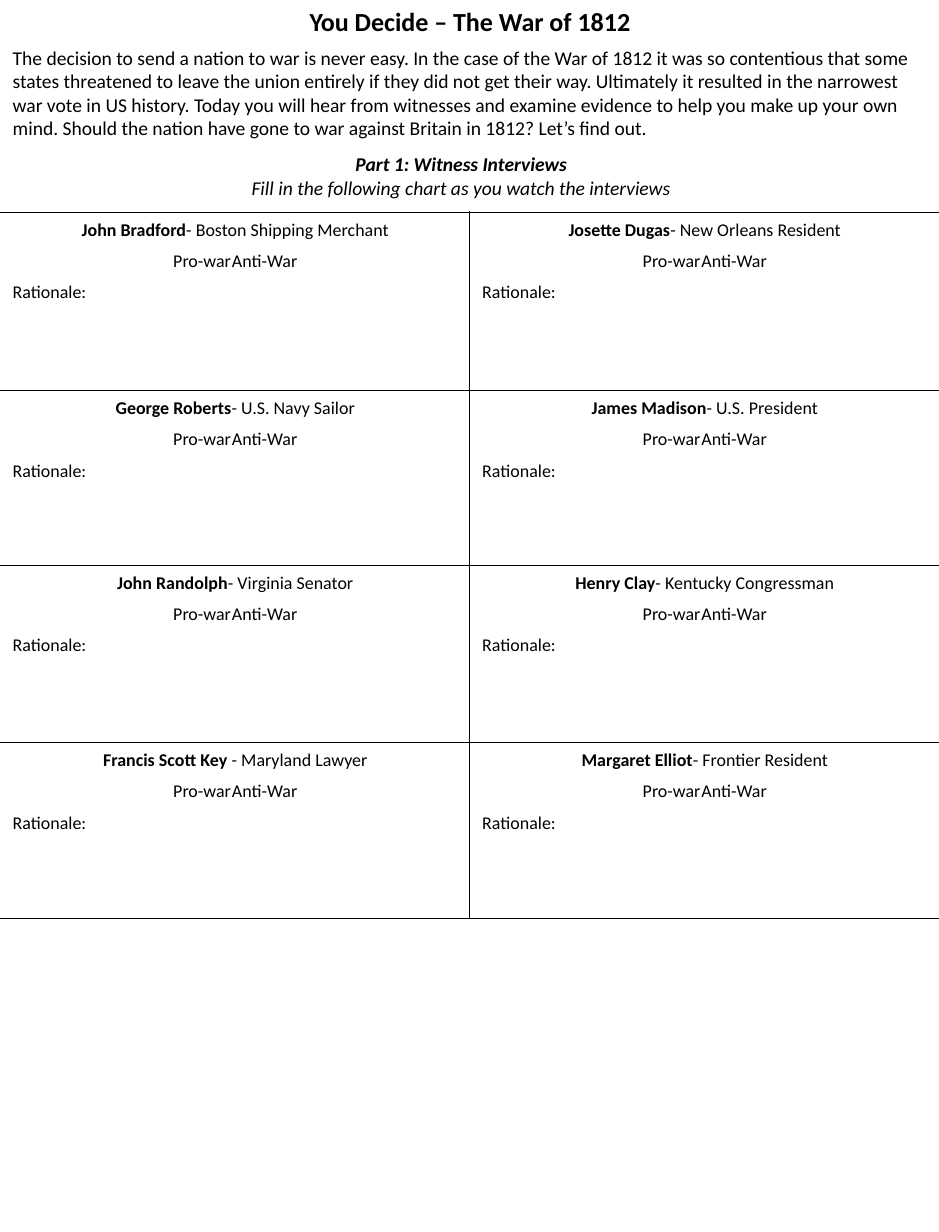
from lxml.etree import SubElement
from pptx import Presentation
from pptx.dml.color import RGBColor
from pptx.enum.shapes import MSO_CONNECTOR
from pptx.enum.text import MSO_ANCHOR, MSO_AUTO_SIZE, PP_ALIGN
from pptx.oxml.ns import qn
from pptx.util import Inches, Pt


def color(hex_code):
    """Turn a hex string into a colour."""
    return RGBColor.from_string(hex_code)


class Worksheet:
    """Hold the style and the current slide of the worksheet."""

    font = "Calibri"
    ink = "000000"
    rule_width = 0.5

    def __init__(self, slide):
        """Remember the slide to draw on."""
        self.slide = slide

    def prepare(self, holder, left, top, width, height):
        """Place a text holder and return its text frame."""
        holder.left, holder.top = Inches(left), Inches(top)
        holder.width, holder.height = Inches(width), Inches(height)
        frame = holder.text_frame
        frame.word_wrap = True
        frame.auto_size = MSO_AUTO_SIZE.SHAPE_TO_FIT_TEXT
        frame.vertical_anchor = MSO_ANCHOR.TOP
        return frame

    def add_runs(self, paragraph, runs, size, align=PP_ALIGN.CENTER, before=0):
        """Fill a paragraph with (text, bold, italic) runs."""
        paragraph.alignment = align
        if before:
            paragraph.space_before = Pt(before)
        for text, bold, italic in runs:
            run = paragraph.add_run()
            run.text = text
            run.font.name = self.font
            run.font.size = Pt(size)
            run.font.bold = bold
            run.font.italic = italic
            run.font.color.rgb = color(self.ink)

    def title(self, text, *place):
        """Set the slide title."""
        frame = self.prepare(self.slide.shapes.title, *place)
        self.add_runs(frame.paragraphs[0], [(text, True, False)], 16)

    def text(self, lines, size, *place, gap=0):
        """Add a text box of (runs, alignment) lines."""
        box = self.slide.shapes.add_textbox(0, 0, 0, 0)
        frame = self.prepare(box, *place)
        for index, (runs, align) in enumerate(lines):
            paragraph = frame.add_paragraph() if index else frame.paragraphs[0]
            self.add_runs(paragraph, runs, size, align, gap if index else 0)

    def rule(self, x1, y1, x2, y2):
        """Draw a thin straight rule."""
        line = self.slide.shapes.add_connector(
            MSO_CONNECTOR.STRAIGHT, Inches(x1), Inches(y1), Inches(x2), Inches(y2))
        line.line.color.rgb = color(self.ink)
        line.line.width = Pt(self.rule_width)
        SubElement(line._element.spPr, qn("a:effectLst"))

    def interview(self, name, role, left, top):
        """Add one witness cell."""
        self.text([
            ([(name, True, False), (f"- {role}", False, False)], PP_ALIGN.CENTER),
            ([("Pro-war\tAnti-War", False, False)], PP_ALIGN.CENTER),
            ([("Rationale:", False, False)], PP_ALIGN.LEFT),
        ], 11, left, top, 3.99, 0.84, gap=6)


INTRO = (
    "The decision to send a nation to war is never easy. In the case of the War of 1812 "
    "it was so contentious that some states threatened to leave the union entirely if they "
    "did not get their way. Ultimately it resulted in the narrowest war vote in US history. "
    "Today you will hear from witnesses and examine evidence to help you make up your own "
    "mind. Should the nation have gone to war against Britain in 1812? Let’s find out."
)
WITNESSES = [
    [("John Bradford", "Boston Shipping Merchant"), ("Josette Dugas", "New Orleans Resident")],
    [("George Roberts", "U.S. Navy Sailor"), ("James Madison", "U.S. President")],
    [("John Randolph", "Virginia Senator"), ("Henry Clay", "Kentucky Congressman")],
    [("Francis Scott Key ", "Maryland Lawyer"), ("Margaret Elliot", "Frontier Resident")],
]
ROW_EDGES = [1.81, 3.33, 4.82, 6.33, 7.83]
COLUMN_LEFTS = [0.01, 4.01]


def main():
    """Build and save the worksheet."""
    deck = Presentation()
    deck.slide_width, deck.slide_height = Inches(8), Inches(10.5)
    sheet = Worksheet(deck.slides.add_slide(deck.slide_layouts[5]))

    sheet.title("You Decide – The War of 1812", 0.01, 0, 7.99, 0.37)
    sheet.text([([(INTRO, False, False)], PP_ALIGN.LEFT)], 12, 0.01, 0.34, 7.99, 0.91)
    sheet.text([
        ([("Part 1: Witness Interviews", True, True)], PP_ALIGN.CENTER),
        ([("Fill in the following chart as you watch the interviews", False, True)],
         PP_ALIGN.CENTER),
    ], 12, 1.92, 1.25, 4.02, 0.5)

    for edge in ROW_EDGES:
        sheet.rule(-0.17, edge, 8.19, edge)
    sheet.rule(4, 1.8, 4, 7.82)

    for top, row in zip(ROW_EDGES, WITNESSES):
        for left, (name, role) in zip(COLUMN_LEFTS, row):
            sheet.interview(name, role, left, top)

    deck.save("out.pptx")


if __name__ == "__main__":
    main()
